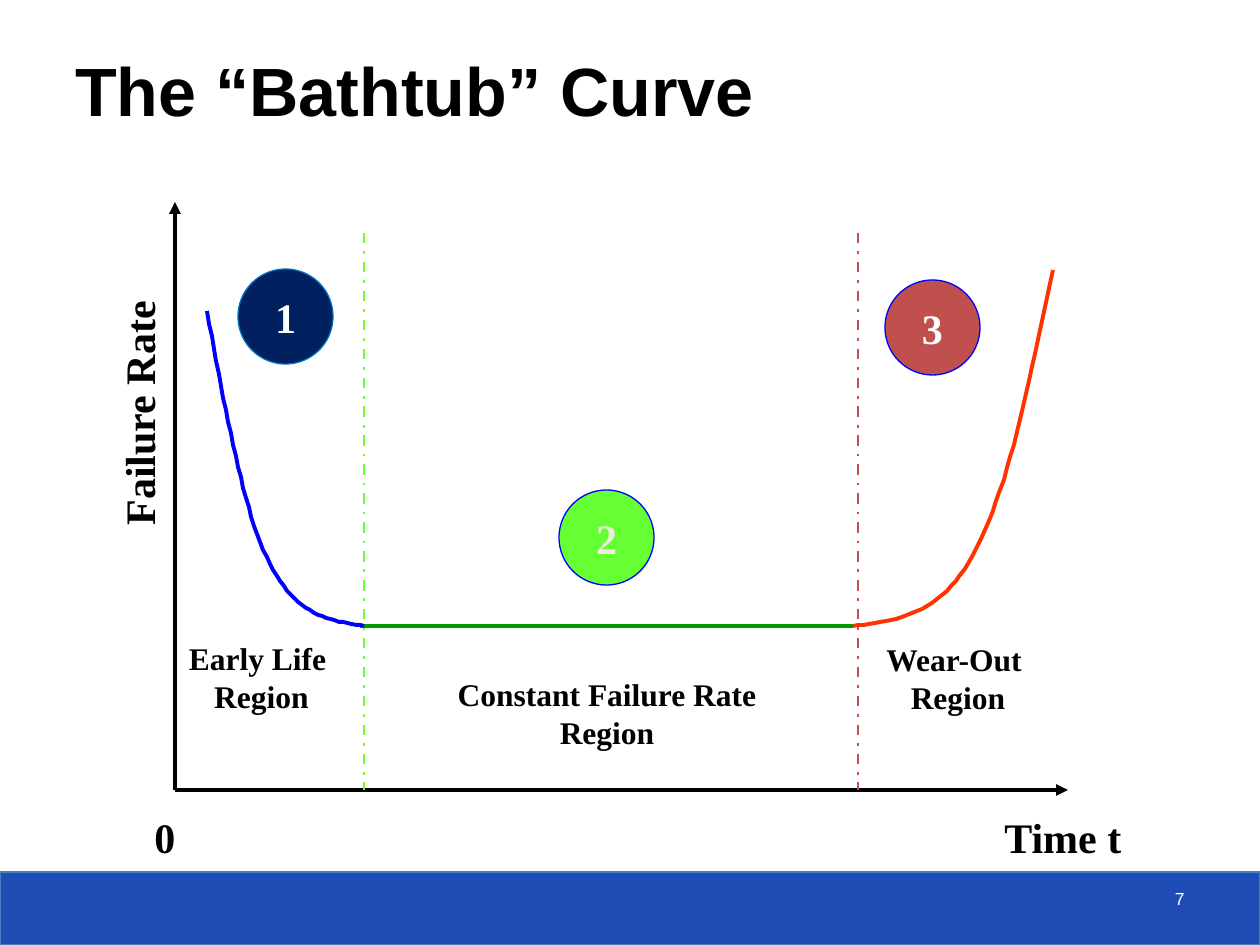
from lxml import etree
from pptx import Presentation
from pptx.dml.color import RGBColor
from pptx.enum.dml import MSO_LINE
from pptx.enum.shapes import MSO_CONNECTOR, MSO_SHAPE
from pptx.enum.text import MSO_ANCHOR, MSO_AUTO_SIZE, PP_ALIGN
from pptx.oxml.ns import qn
from pptx.util import Pt

PX = 914400 / 126
STRAIGHT = MSO_CONNECTOR.STRAIGHT
RECT, OVAL = MSO_SHAPE.RECTANGLE, MSO_SHAPE.OVAL
DASH_DOT = MSO_LINE.DASH_DOT
TOP, MIDDLE, BOTTOM = MSO_ANCHOR.TOP, MSO_ANCHOR.MIDDLE, MSO_ANCHOR.BOTTOM
LEFT, CENTER, RIGHT = PP_ALIGN.LEFT, PP_ALIGN.CENTER, PP_ALIGN.RIGHT
GROW = MSO_AUTO_SIZE.SHAPE_TO_FIT_TEXT
SERIF, SANS = "Times New Roman", "Arial"
COLORS = {
    "black": "000000", "white": "FFFFFF", "cream": "EEECE1",
    "footer": "204DB5", "footer_edge": "4B7EBC",
    "navy": "002060", "sky": "0070C0", "blue": "0000FF",
    "lime": "66FF33", "green": "009900", "brick": "C0504D", "orange": "FF3300",
}
RGB = {name: RGBColor.from_string(value) for name, value in COLORS.items()}
STEPS = 24


def emu(*lengths):
    return [round(length * PX) for length in lengths]


def set_text(sp, text, size, color="black", font=SERIF, bold=True,
             align=LEFT, anchor=TOP, wrap=False):
    tf = sp.text_frame
    tf.text = text
    tf.word_wrap = wrap
    tf.vertical_anchor = anchor
    for p in tf.paragraphs:
        p.alignment = align
        p.font.name = font
        p.font.size = Pt(size)
        p.font.bold = bold
        p.font.color.rgb = RGB[color]


prs = Presentation()
prs.slide_width, prs.slide_height = emu(1260, 945)
s = prs.slides.add_slide(prs.slide_layouts[6])

footer = s.shapes.add_shape(RECT, *emu(0, 872, 1260, 73))
footer.shadow.inherit = False
footer.fill.solid()
footer.fill.fore_color.rgb = RGB["footer"]
footer.line.color.rgb = RGB["footer_edge"]
footer.line.width = Pt(0.75)

title = s.shapes.add_textbox(*emu(63, 31, 1162, 105))
set_text(title, "The “Bathtub” Curve", 39, font=SANS, anchor=BOTTOM, wrap=True)

lines = [
    (175, 790, 1068, 790, "black", 2.25, None, True),
    (175, 790, 175, 202, "black", 2.25, None, True),
    (364, 233, 364, 790, "lime", 1.5, DASH_DOT, False),
    (858, 233, 858, 790, "brick", 1.5, DASH_DOT, False),
    (360, 626, 853, 626, "green", 2.25, None, False),
]
for x1, y1, x2, y2, color, width, dash, arrow in lines:
    cn = s.shapes.add_connector(STRAIGHT, *emu(x1, y1, x2, y2))
    cn.line.color.rgb = RGB[color]
    cn.line.width = Pt(width)
    if dash:
        cn.line.dash_style = dash
    if arrow:
        etree.SubElement(cn.line._get_or_add_ln(), qn("a:tailEnd"), type="triangle")
    etree.SubElement(cn._element.spPr, qn("a:effectLst"))

curves = [
    ("blue", (207, 311), [((226, 412), (243, 512), (270, 564)),
                          ((296, 616), (330, 621), (364, 626))]),
    ("orange", (1053, 270), [((1029, 383), (1007, 495), (973, 555)),
                             ((940, 615), (897, 621), (853, 626))]),
]
for color, start, segments in curves:
    points = []
    p0 = start
    for p1, p2, p3 in segments:
        for i in range(1, STEPS + 1):
            t = i / STEPS
            u = 1 - t
            points.append(tuple(u**3 * a + 3 * u * u * t * b + 3 * u * t * t * c + t**3 * d
                                for a, b, c, d in zip(p0, p1, p2, p3)))
        p0 = p3
    fb = s.shapes.build_freeform(*start, scale=PX)
    fb.add_line_segments(points, close=False)
    curve = fb.convert_to_shape()
    curve.shadow.inherit = False
    curve.fill.background()
    curve.line.color.rgb = RGB[color]
    curve.line.width = Pt(2.25)

badges = [
    ("1", 238, 269, "navy", "sky", "white"),
    ("2", 559, 490, "lime", "blue", "cream"),
    ("3", 885, 280, "brick", "blue", "white"),
]
for number, x, y, fill, edge, color in badges:
    badge = s.shapes.add_shape(OVAL, *emu(x, y, 95, 95))
    badge.shadow.inherit = False
    badge.fill.solid()
    badge.fill.fore_color.rgb = RGB[fill]
    badge.line.color.rgb = RGB[edge]
    badge.line.width = Pt(0.75)
    set_text(badge, number, 24, color, align=CENTER, anchor=MIDDLE)

labels = [
    ("Early Life \nRegion", 175, 633, 173, 89, 18, CENTER, False, 0),
    ("Constant Failure Rate Region", 402, 669, 410, 88, 18, CENTER, True, 0),
    ("Wear-Out \nRegion", 873, 634, 170, 89, 18, CENTER, False, 0),
    ("Failure Rate", 13, 381, 251, 63, 24, LEFT, False, 270),
    ("0", 142, 805, 47, 63, 24, LEFT, False, 0),
    ("Time t", 992, 805, 144, 63, 24, LEFT, False, 0),
]
for text, x, y, w, h, size, align, wrap, rotation in labels:
    label = s.shapes.add_textbox(*emu(x, y, w, h))
    set_text(label, text, size, align=align, wrap=wrap)
    label.text_frame.auto_size = GROW
    label.rotation = rotation

page = s.shapes.add_textbox(*emu(903, 882, 294, 42))
set_text(page, "7", 10, "white", SANS, bold=False, align=RIGHT, wrap=True)

prs.save("out.pptx")
